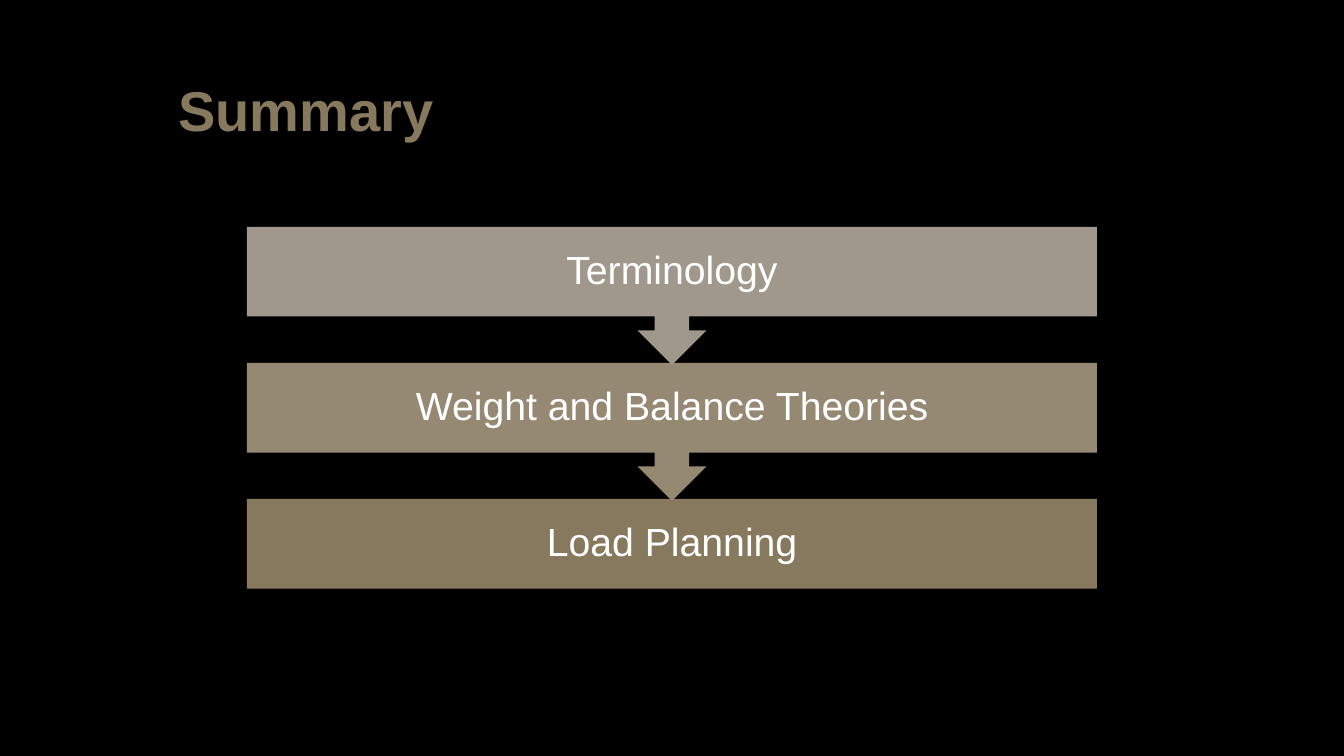
from pptx import Presentation
from pptx.dml.color import RGBColor
from pptx.enum.shapes import MSO_SHAPE
from pptx.enum.text import MSO_ANCHOR, MSO_AUTO_SIZE, PP_ALIGN
from pptx.util import Inches, Pt

CENTER = PP_ALIGN.CENTER
TOP, MIDDLE = MSO_ANCHOR.TOP, MSO_ANCHOR.MIDDLE
BOX, BOX_WITH_ARROW = MSO_SHAPE.RECTANGLE, MSO_SHAPE.DOWN_ARROW_CALLOUT

# Content
HEADING = "Summary"
STEPS = [
    ("Terminology", "A0988C"),
    ("Weight and Balance Theories", "958973"),
    ("Load Planning", "87795D"),
]

# Layout in inches
SLIDE_W, SLIDE_H = 13.33, 7.5
STEP_W, STEP_H = 8.43, 0.89
CALLOUT_H = 1.37
STEP_LEFT = (SLIDE_W - STEP_W) / 2
FIRST_TOP, PITCH = 2.25, 1.35
INSET = 0.22


def color(hex_value):
    return RGBColor.from_string(hex_value)


def write(frame, text, size, hex_value, bold=False):
    paragraph = frame.paragraphs[0]
    paragraph.alignment = CENTER
    run = paragraph.add_run()
    run.text = text
    run.font.name = "Arial"
    run.font.size = Pt(size)
    run.font.bold = bold
    run.font.color.rgb = color(hex_value)
    return paragraph


prs = Presentation()
prs.slide_width, prs.slide_height = Inches(SLIDE_W), Inches(SLIDE_H)
slide = prs.slides.add_slide(prs.slide_layouts[5])
slide.background.fill.solid()
slide.background.fill.fore_color.rgb = color("000000")

# Heading
heading = slide.shapes.title
heading.left, heading.top = Inches(0.3), Inches(0.7)
heading.width, heading.height = Inches(5.47), Inches(0.77)
heading.text_frame.vertical_anchor = TOP
heading.text_frame.auto_size = MSO_AUTO_SIZE.NONE
write(heading.text_frame, HEADING, 40, "87795D", bold=True)

# Steps, last one first so that each arrow lies over the step below it
last = len(STEPS) - 1
for row, (label, fill) in reversed(list(enumerate(STEPS))):
    kind, height = (BOX, STEP_H) if row == last else (BOX_WITH_ARROW, CALLOUT_H)
    step = slide.shapes.add_shape(
        kind, Inches(STEP_LEFT), Inches(FIRST_TOP + row * PITCH),
        Inches(STEP_W), Inches(height))
    step.shadow.inherit = False
    step.fill.solid()
    step.fill.fore_color.rgb = color(fill)
    step.line.fill.background()
    frame = step.text_frame
    frame.word_wrap = True
    frame.vertical_anchor = MIDDLE
    frame.margin_left = frame.margin_right = Inches(INSET)
    frame.margin_top = frame.margin_bottom = Inches(INSET)
    write(frame, label, 28, "FFFFFF").line_spacing = 0.9

prs.save("out.pptx")
